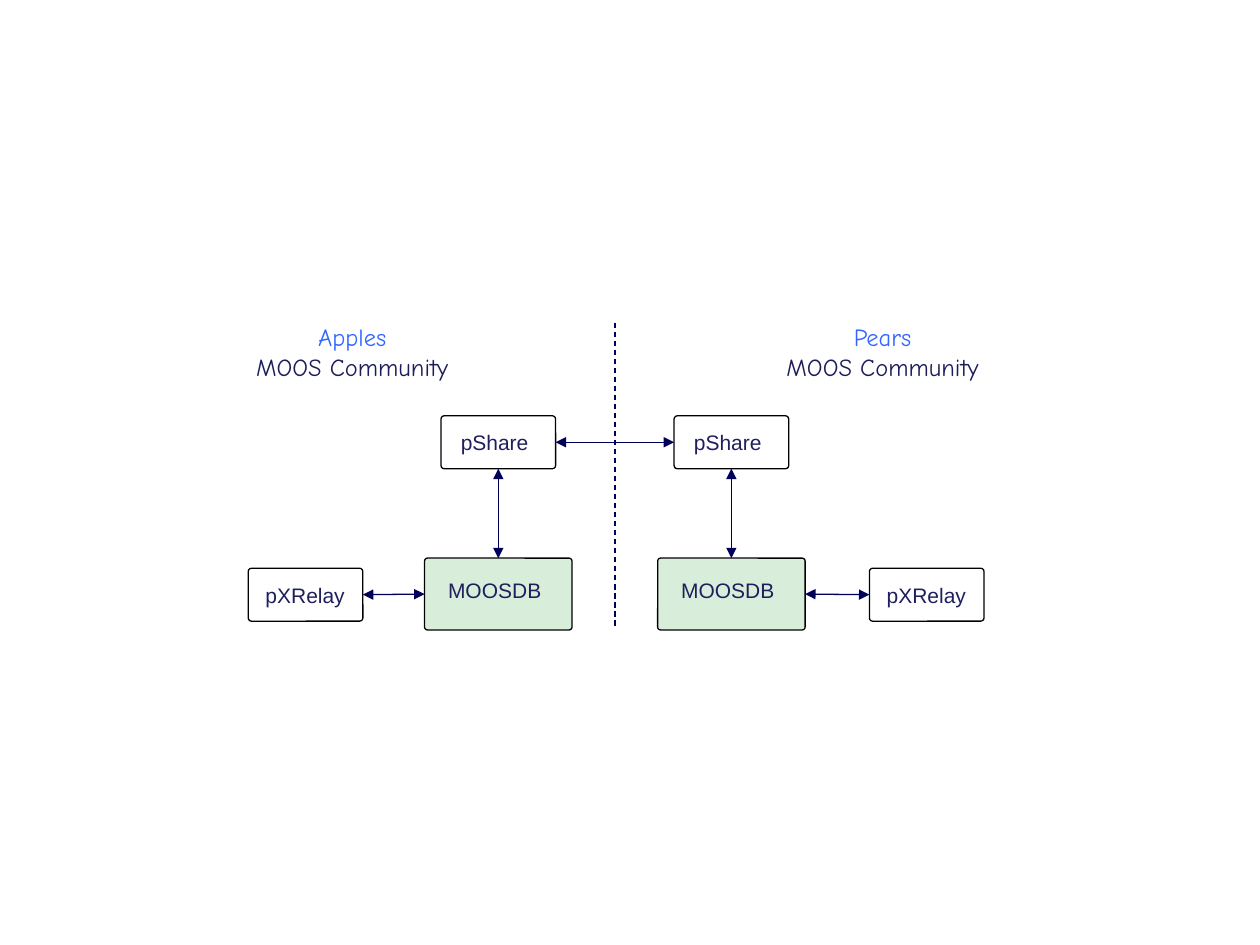
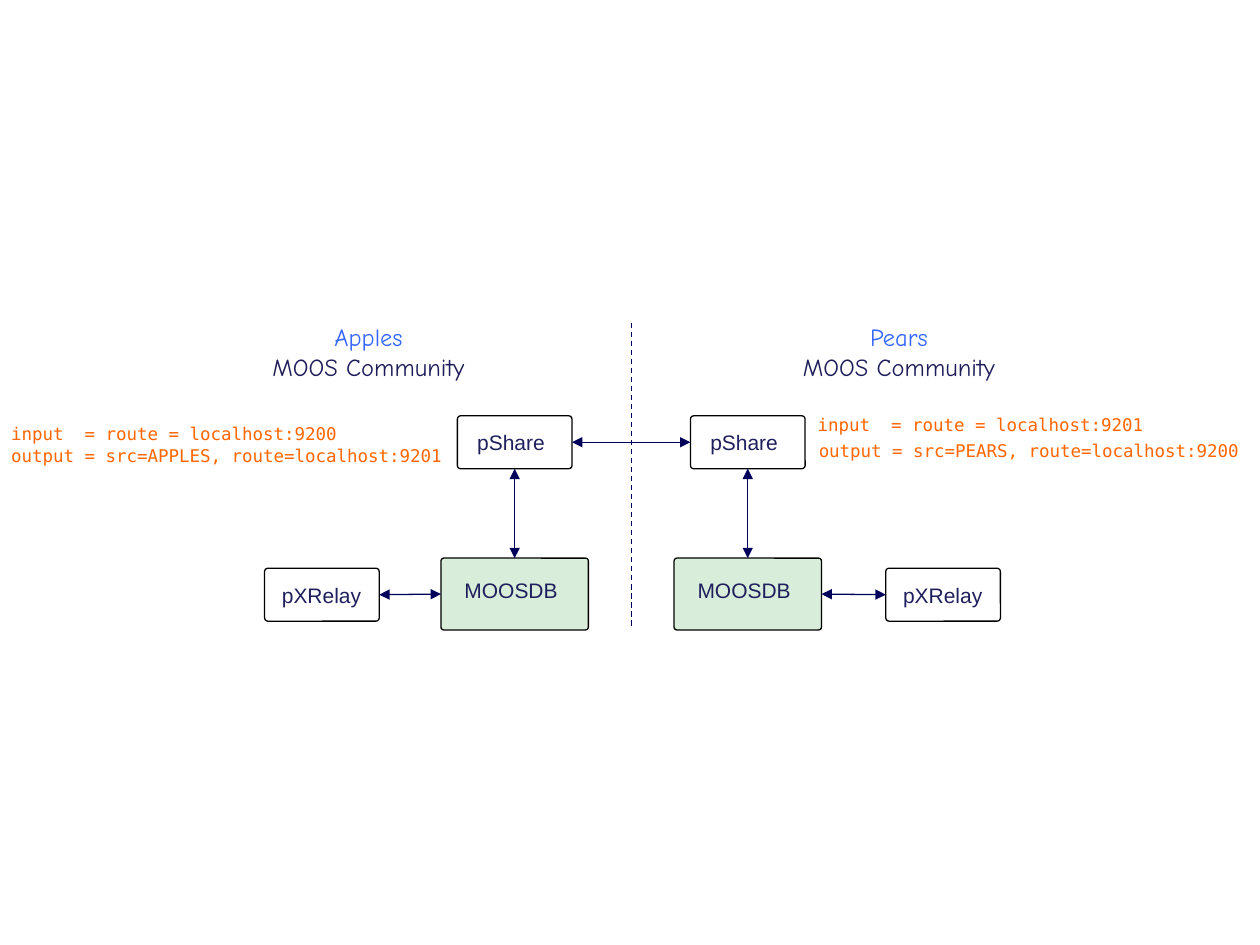
"""Build two slides of the Apples and Pears MOOS communities joined by pShare."""
from lxml import etree
from pptx import Presentation
from pptx.dml.color import RGBColor
from pptx.enum.dml import MSO_LINE
from pptx.enum.shapes import MSO_CONNECTOR, MSO_SHAPE
from pptx.enum.text import MSO_ANCHOR, MSO_AUTO_SIZE, PP_ALIGN
from pptx.oxml.ns import qn
from pptx.util import Inches, Pt

WHITE = RGBColor(0xFF, 0xFF, 0xFF)
BLACK = RGBColor(0x00, 0x00, 0x00)
GREEN = RGBColor(0x06, 0x8F, 0x0C)
NAVY = RGBColor(0x00, 0x00, 0x5A)
LABEL = RGBColor(0x1F, 0x1F, 0x5D)
HEADING = RGBColor(0x1E, 0x1D, 0x5A)
BLUE = RGBColor(0x33, 0x66, 0xFF)
ORANGE = RGBColor(0xFF, 0x66, 0x00)

TOP, LEFT, BOTTOM, RIGHT = range(4)
COLUMN_STEP = 1.85
SLIDE_SHIFTS = [0, 0.13]
COMMUNITIES = [("Apples", 1.9, 1.97), ("Pears", 6.11, 6.9)]
ROUTES = [
    (-0.01, 3.31, 2.81, "input  = route = localhost:9200"),
    (-0.01, 3.48, 3.65, "output = src=APPLES, route=localhost:9201"),
    (6.39, 3.24, 2.81, "input  = route = localhost:9201"),
    (6.4, 3.44, 3.53, "output = src=PEARS, route=localhost:9200"),
]


def add_text(s, x, y, w, h, lines, font, size, align=PP_ALIGN.LEFT):
    tf = s.shapes.add_textbox(Inches(x), Inches(y), Inches(w), Inches(h)).text_frame
    tf.word_wrap = False
    tf.auto_size = MSO_AUTO_SIZE.SHAPE_TO_FIT_TEXT
    for i, (text, color) in enumerate(lines):
        p = tf.add_paragraph() if i else tf.paragraphs[0]
        p.alignment = align
        r = p.add_run()
        r.text = text
        r.font.name = font
        r.font.size = Pt(size)
        r.font.color.rgb = color


def add_line(s, x1, y1, x2, y2):
    c = s.shapes.add_connector(
        MSO_CONNECTOR.STRAIGHT, Inches(x1), Inches(y1), Inches(x2), Inches(y2))
    c.line.color.rgb = NAVY
    c.line.width = Pt(0.75)
    etree.SubElement(c._element.spPr, qn("a:effectLst"))
    return c


prs = Presentation()
prs.slide_width = Inches(10)
prs.slide_height = Inches(7.5)

for shift in SLIDE_SHIFTS:
    s = prs.slides.add_slide(prs.slide_layouts[6])
    s.background.fill.solid()
    s.background.fill.fore_color.rgb = WHITE

    divider = add_line(s, 4.88 + shift, 2.56, 4.88 + shift, 4.98)
    divider.line.dash_style = MSO_LINE.DASH

    nodes = {}
    for i, (community, heading_x, relay_x) in enumerate(COMMUNITIES):
        add_text(s, heading_x + shift, 2.51, 1.79, 0.57,
                 [(community, BLUE), ("MOOS Community", HEADING)],
                 "Comic Neue", 14, PP_ALIGN.CENTER)

        step = i * COLUMN_STEP
        for name, x, y, w, h, inset, lift in [
            ("pXRelay", relay_x, 4.51, 0.91, 0.42, 0.13, 0),
            ("MOOSDB", 3.37 + step, 4.43, 1.17, 0.57, 0.18, 0.07),
            ("pShare", 3.5 + step, 3.3, 0.91, 0.42, 0.15, 0),
        ]:
            sp = s.shapes.add_shape(
                MSO_SHAPE.ROUNDED_RECTANGLE,
                Inches(x + shift), Inches(y), Inches(w), Inches(h))
            sp.adjustments[0] = 0.04 if name == "MOOSDB" else 0.06
            sp.shadow.inherit = False
            sp.line.color.rgb = BLACK
            sp.line.width = Pt(0.75)
            if name == "MOOSDB":
                sp.fill.solid()
                sp.fill.fore_color.rgb = GREEN
                color = sp._element.spPr.find(qn("a:solidFill"))[0]
                etree.SubElement(color, qn("a:alpha"), val="15000")
            else:
                sp.fill.background()

            tf = sp.text_frame
            tf.word_wrap = True
            tf.vertical_anchor = MSO_ANCHOR.MIDDLE
            tf.margin_left = Inches(inset)
            tf.margin_right = tf.margin_top = 0
            tf.margin_bottom = Inches(lift)
            p = tf.paragraphs[0]
            p.alignment = PP_ALIGN.LEFT
            r = p.add_run()
            r.text = name
            r.font.name = "Arial"
            r.font.size = Pt(12)
            r.font.color.rgb = LABEL
            nodes[community, name] = sp

    for start, start_side, end, end_side in [
        (("Apples", "pXRelay"), RIGHT, ("Apples", "MOOSDB"), LEFT),
        (("Pears", "pXRelay"), LEFT, ("Pears", "MOOSDB"), RIGHT),
        (("Apples", "pShare"), BOTTOM, ("Apples", "MOOSDB"), TOP),
        (("Pears", "pShare"), BOTTOM, ("Pears", "MOOSDB"), TOP),
        (("Apples", "pShare"), RIGHT, ("Pears", "pShare"), LEFT),
    ]:
        arrow = add_line(s, 0, 0, 1, 1)
        arrow.begin_connect(nodes[start], start_side)
        arrow.end_connect(nodes[end], end_side)
        ln = arrow.line._get_or_add_ln()
        for tag in ("a:headEnd", "a:tailEnd"):
            etree.SubElement(ln, qn(tag), type="triangle")

for x, y, w, text in ROUTES:
    add_text(s, x, y, w, 0.27, [(text, ORANGE)], "DejaVu Sans Mono", 10)

prs.save("out.pptx")
